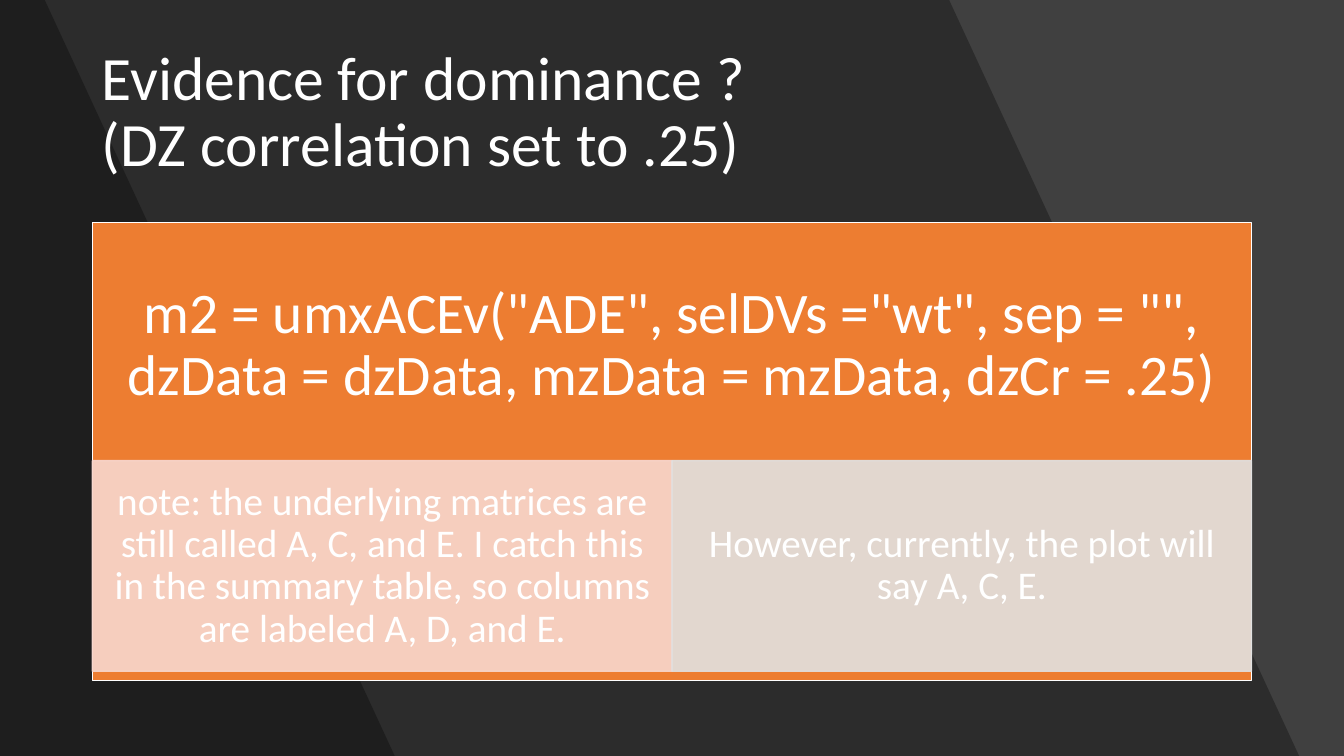
from lxml import etree
from pptx import Presentation
from pptx.dml.color import RGBColor
from pptx.enum import shapes as sh, text as tx
from pptx.oxml import ns
from pptx.util import Pt


def paint(shape, color, alpha=100, line=None):
    shape.shadow.inherit = False
    shape.fill.solid()
    shape.fill.fore_color.rgb = RGBColor.from_string(color)
    if line:
        shape.line.color.rgb = RGBColor.from_string(line)
        shape.line.width = Pt(1)
    else:
        shape.line.fill.background()
    if alpha < 100:
        for node in shape._element.spPr.iter(ns.qn("a:srgbClr")):
            etree.SubElement(node, ns.qn("a:alpha"), val=str(alpha * 1000))


def write(shape, words, size, align=tx.PP_ALIGN.CENTER, pad=(7.2, 3.6)):
    frame = shape.text_frame
    frame.word_wrap = True
    frame.vertical_anchor = tx.MSO_ANCHOR.MIDDLE
    frame.margin_left = frame.margin_right = Pt(pad[0])
    frame.margin_top = frame.margin_bottom = Pt(pad[1])
    para = frame.paragraphs[0]
    para.text = words
    para.alignment = align
    para.line_spacing = 0.9
    for run in para.runs:
        run.font.name = "Calibri"
        run.font.size = Pt(size)
        run.font.color.rgb = RGBColor.from_string("FFFFFF")


deck = Presentation()
deck.slide_width, deck.slide_height = Pt(960), Pt(540)
slide = deck.slides.add_slide(deck.slide_layouts[6])
slide.background.fill.solid()
slide.background.fill.fore_color.rgb = RGBColor.from_string("404040")
items = slide.shapes

for top, foot in [(678.5, 928), (32, 282)]:
    pen = items.build_freeform(0, 0, scale=Pt(1))
    pen.add_line_segments([(top, 0), (foot, 540), (0, 540)], close=True)
    paint(pen.convert_to_shape(), "000000", 30)

title = items.add_textbox(Pt(65.5), Pt(28.75), Pt(829), Pt(104.4))
write(title, "Evidence for dominance ?\n(DZ correlation set to .25)", 44,
      tx.PP_ALIGN.LEFT)

left, wide = 66, 828
panel = items.add_shape(sh.MSO_SHAPE.RECTANGLE, Pt(left), Pt(159), Pt(wide), Pt(327))
paint(panel, "ED7D31", line="FFFFFF")
code = items.add_textbox(Pt(left), Pt(159), Pt(wide), Pt(176.5))
write(code, 'm2 = umxACEv("ADE", selDVs ="wt", sep = "", '
      'dzData = dzData, mzData = mzData, dzCr = .25)', 41, pad=(23, 23))

notes = [
    ("F8D7CE", "note: the underlying matrices are still called A, C, and E. "
     "I catch this in the summary table, so columns are labeled A, D, and E."),
    ("E1E1E1", "However, currently, the plot will say A, C, E."),
]
half = wide / 2
for i, (color, words) in enumerate(notes):
    box = items.add_shape(sh.MSO_SHAPE.RECTANGLE, Pt(left + i * half), Pt(329),
                          Pt(half), Pt(150.5))
    paint(box, color, 90, color)
    write(box, words, 28, pad=(15.7, 2.8))

deck.save("out.pptx")
